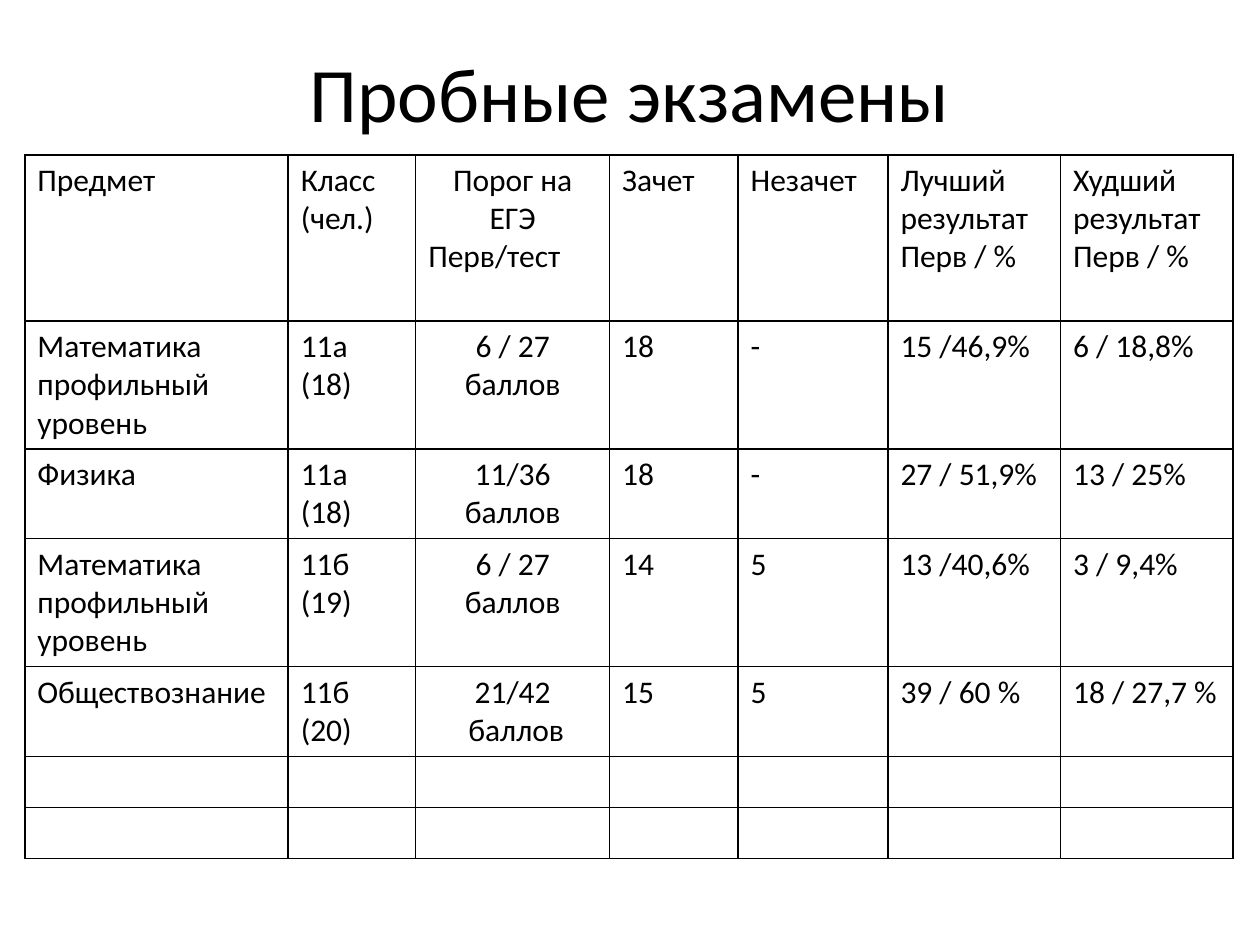
from dataclasses import astuple, dataclass

from lxml.etree import SubElement
from pptx import Presentation
from pptx.dml.color import RGBColor
from pptx.enum.text import MSO_ANCHOR, PP_ALIGN
from pptx.oxml.ns import qn
from pptx.util import Cm, Pt

COLORS = {"text": "000000", "border": "000000", "background": "FFFFFF"}
FONT = "Calibri"
COLUMN_WIDTHS = [5.31, 2.57, 3.91, 2.59, 3.02, 3.48, 3.48]
ROW_HEIGHTS = [3.35, 2.58, 1.81, 2.58, 1.81, 1.03, 1.03]
THRESHOLD_COLUMN = 2


@dataclass
class ExamRow:
    subject: str = ""
    group: str = ""
    threshold: str = ""
    passed: str = ""
    failed: str = ""
    best: str = ""
    worst: str = ""


EXAM_ROWS = [
    ExamRow("Предмет", "Класс\n(чел.)", "Порог на ЕГЭ\nПерв/тест", "Зачет", "Незачет",
            "Лучший результат\nПерв / %", "Худший результат\nПерв / %"),
    ExamRow("Математика профильный уровень", "11а\n(18)", "6 / 27 баллов",
            "18", "-", "15 /46,9%", "6 / 18,8%"),
    ExamRow("Физика", "11а\n(18)", "11/36\nбаллов", "18", "-", "27 / 51,9%", "13 / 25%"),
    ExamRow("Математика профильный уровень", "11б\n(19)", "6 / 27 баллов",
            "14", "5", "13 /40,6%", "3 / 9,4%"),
    ExamRow("Обществознание", "11б\n(20)", "21/42\n баллов",
            "15", "5", "39 / 60 %", "18 / 27,7 %"),
    ExamRow(),
    ExamRow(),
]


def format_text(text_frame, size: float, align: PP_ALIGN) -> None:
    for paragraph in text_frame.paragraphs:
        paragraph.alignment = align
        for run in paragraph.runs:
            run.font.name = FONT
            run.font.size = Pt(size)
            run.font.bold = False
            run.font.color.rgb = RGBColor.from_string(COLORS["text"])


def add_borders(cell, width: float = 1) -> None:
    properties = cell._tc.get_or_add_tcPr()
    for side in ("a:lnL", "a:lnR", "a:lnT", "a:lnB"):
        line = SubElement(properties, qn(side), w=str(Pt(width)))
        fill = SubElement(line, qn("a:solidFill"))
        SubElement(fill, qn("a:srgbClr"), val=COLORS["border"])


def add_title(slide, heading: str) -> None:
    title = slide.shapes.title
    title.left, title.top, title.width, title.height = Cm(1.27), Cm(0.76), Cm(22.86), Cm(2.16)
    title.text_frame.text = heading
    title.text_frame.vertical_anchor = MSO_ANCHOR.MIDDLE
    format_text(title.text_frame, 44, PP_ALIGN.CENTER)


def add_results(slide, exam_rows: list[ExamRow]) -> None:
    results = slide.shapes.add_table(
        len(exam_rows), len(COLUMN_WIDTHS), Cm(0.5), Cm(3.12),
        Cm(sum(COLUMN_WIDTHS)), Cm(sum(ROW_HEIGHTS))).table
    results.first_row = False
    results.horz_banding = False
    for column, width in zip(results.columns, COLUMN_WIDTHS):
        column.width = Cm(width)
    for row, height, exam in zip(results.rows, ROW_HEIGHTS, exam_rows):
        row.height = Cm(height)
        for index, (cell, entry) in enumerate(zip(row.cells, astuple(exam))):
            cell.text_frame.text = entry
            centered = index == THRESHOLD_COLUMN
            format_text(cell.text_frame, 18, PP_ALIGN.CENTER if centered else PP_ALIGN.LEFT)
            add_borders(cell)
            cell.fill.background()
    threshold_header = results.cell(0, THRESHOLD_COLUMN).text_frame
    threshold_header.paragraphs[-1].alignment = PP_ALIGN.LEFT


def main() -> None:
    presentation = Presentation()
    presentation.slide_width, presentation.slide_height = Cm(25.4), Cm(19.05)
    slide = presentation.slides.add_slide(presentation.slide_layouts[5])
    slide.background.fill.solid()
    slide.background.fill.fore_color.rgb = RGBColor.from_string(COLORS["background"])
    add_title(slide, "Пробные экзамены")
    add_results(slide, EXAM_ROWS)
    presentation.save("out.pptx")


if __name__ == "__main__":
    main()
